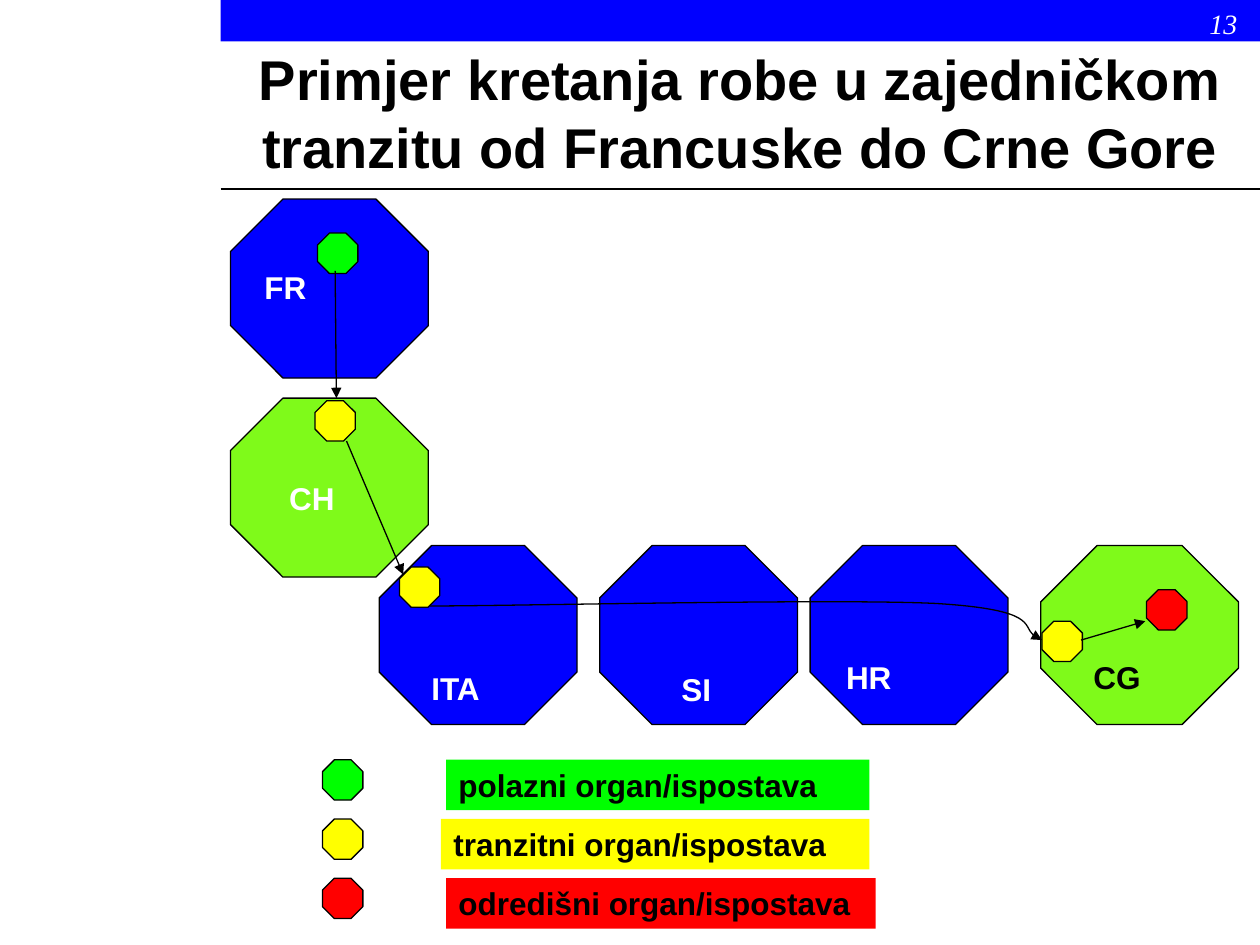
from lxml import etree
from pptx import Presentation
from pptx.dml.color import RGBColor
from pptx.enum.shapes import MSO_CONNECTOR, MSO_SHAPE
from pptx.enum.text import MSO_ANCHOR, MSO_AUTO_SIZE, PP_ALIGN
from pptx.oxml.ns import qn
from pptx.util import Inches, Pt

OCTAGON, RECTANGLE = MSO_SHAPE.OCTAGON, MSO_SHAPE.RECTANGLE
STRAIGHT = MSO_CONNECTOR.STRAIGHT
TOP, MIDDLE = MSO_ANCHOR.TOP, MSO_ANCHOR.MIDDLE
LEFT, CENTER = PP_ALIGN.LEFT, PP_ALIGN.CENTER
NO_AUTOFIT = MSO_AUTO_SIZE.NONE

WIDTH, HEIGHT = 10, 7.5
MARGIN = 0.175 * WIDTH
PANEL = WIDTH - MARGIN
COUNTRY_SIZE = (1.57, 1.42)
OFFICE_SIZE = (0.32, 0.32)
LABEL_SIZE = (0.95, 0.4)
ROWS = (1.58, 3.16, 4.33)
LEGEND_TOP, LEGEND_STEP = 6.03, 0.47
BLUE, LIME, BLACK, WHITE = "0000FF", "7FFA1A", "000000", "FFFFFF"
GREEN, YELLOW, RED = "00FF00", "FFFF00", "FF0000"

COUNTRIES = [
    (4.76, 2, BLUE, 0.293),
    (1.83, 0, BLUE, 0.293),
    (3.01, 2, BLUE, 0.293),
    (6.43, 2, BLUE, 0.293),
    (1.83, 1, LIME, 0.293),
    (8.26, 2, LIME, 0.315),
]
LABELS = [
    ("FR", 1.79, 2.08, WHITE),
    ("CH", 2, 3.75, WHITE),
    ("ITA", 3.14, 5.26, WHITE),
    ("SI", 5.05, 5.27, WHITE),
    ("HR", 6.42, 5.17, WHITE),
    ("CG", 8.39, 5.17, BLACK),
]
OFFICES = [
    (2.52, 1.85, GREEN),
    (2.5, 3.18, YELLOW),
    (3.17, 4.5, YELLOW),
    (8.27, 4.93, YELLOW),
    (9.1, 4.68, RED),
]
ARROWS = [
    ((2.66, 2.15), (2.67, 3.16)),
    ((2.75, 3.5), (3.2, 4.56)),
    ((8.58, 5.08), (9.09, 4.93)),
]
ROUTE = [(3.41, 4.81), (4.08, 4.81), (6.62, 4.75), (7.43, 4.79),
         (8.24, 4.84), (8.09, 5.02), (8.27, 5.08)]
LEGEND = [
    ("polazni organ/ispostava", GREEN, 3.54, 3.36),
    ("tranzitni organ/ispostava", YELLOW, 3.5, 3.4),
    ("odredišni organ/ispostava", RED, 3.54, 3.41),
]


def color(value):
    """Turn a hex string into a colour."""
    return RGBColor.from_string(value)


def write(shape, text, size=18, fill=BLACK, font="Arial", bold=True,
          italic=False, align=LEFT, anchor=TOP, wrap=True):
    """Put one formatted paragraph into a shape."""
    frame = shape.text_frame
    frame.auto_size = NO_AUTOFIT
    frame.word_wrap = wrap
    frame.vertical_anchor = anchor
    paragraph = frame.paragraphs[0]
    paragraph.alignment = align
    run = paragraph.add_run()
    run.text = text
    run.font.name, run.font.size = font, Pt(size)
    run.font.bold, run.font.italic = bold, italic
    run.font.color.rgb = color(fill)


def add_text(slide, text, left, top, width, height, **text_format):
    """Add a text box with one formatted paragraph."""
    box = slide.shapes.add_textbox(*map(Inches, (left, top, width, height)))
    write(box, text, **text_format)


def outline(shape):
    """Give a shape or line the thin black stroke."""
    shape.line.color.rgb = color(BLACK)
    shape.line.width = Pt(0.75)


def add_rectangle(slide, left, top, width, height, fill):
    """Add a filled rectangle without an outline."""
    shape = slide.shapes.add_shape(
        RECTANGLE, *map(Inches, (left, top, width, height)))
    shape.shadow.inherit = False
    shape.fill.solid()
    shape.fill.fore_color.rgb = color(fill)
    shape.line.fill.background()
    return shape


def add_octagon(slide, left, top, size, fill, corner=0.293):
    """Add an outlined octagon."""
    shape = slide.shapes.add_shape(
        OCTAGON, *map(Inches, (left, top, *size)))
    shape.adjustments[0] = corner
    shape.shadow.inherit = False
    shape.fill.solid()
    shape.fill.fore_color.rgb = color(fill)
    outline(shape)


def add_arrowhead(shape):
    """Put a triangle at the end of a line."""
    etree.SubElement(shape.line._get_or_add_ln(), qn("a:tailEnd"),
                     type="triangle")


def add_line(slide, start, end, arrow=False):
    """Add a straight line, with an arrowhead if wanted."""
    line = slide.shapes.add_connector(
        STRAIGHT, *map(Inches, (*start, *end)))
    outline(line)
    if arrow:
        add_arrowhead(line)
    etree.SubElement(line._element.spPr, qn("a:effectLst"))


def add_curve(slide, points):
    """Add an arrow of cubic curves through a start and triples of points."""
    start, *others = [(Inches(x), Inches(y)) for x, y in points]
    builder = slide.shapes.build_freeform(*start)
    builder.add_line_segments(others, close=False)
    curve = builder.convert_to_shape()
    curve.shadow.inherit = False
    curve.fill.background()
    outline(curve)
    add_arrowhead(curve)
    segments = list(curve._element.iter(qn("a:lnTo")))
    for first in range(0, len(segments), 3):
        triple = segments[first:first + 3]
        cubic = etree.SubElement(triple[0].getparent(), qn("a:cubicBezTo"))
        for segment in triple:
            cubic.append(segment[0])
            segment.getparent().remove(segment)


def add_header(slide):
    """Add the bar, slide number, title and rule."""
    add_rectangle(slide, MARGIN, 0, PANEL, 0.33, BLUE)
    add_text(slide, "13", 9.5, 0, 0.5, 0.37, size=16, fill=WHITE,
             font="Times New Roman", bold=False, italic=True)
    title = slide.shapes.title
    title.left, title.top = Inches(MARGIN), Inches(0.3)
    title.width, title.height = Inches(PANEL), Inches(1.18)
    write(title, "Primjer kretanja robe u zajedničkom tranzitu "
          "od Francuske do Crne Gore", size=32, align=CENTER, anchor=MIDDLE)
    rule = 0.2 * HEIGHT
    add_line(slide, (MARGIN, rule), (WIDTH, rule))


def add_map(slide):
    """Add the countries, offices and transit route."""
    for left, row, fill, corner in COUNTRIES:
        add_octagon(slide, left, ROWS[row], COUNTRY_SIZE, fill, corner)
    add_curve(slide, ROUTE)
    for left, top, fill in OFFICES:
        add_octagon(slide, left, top, OFFICE_SIZE, fill)
    for start, end in ARROWS:
        add_line(slide, start, end, arrow=True)
    for text, left, top, fill in LABELS:
        add_text(slide, text, left, top, *LABEL_SIZE, fill=fill, align=CENTER)


def add_legend(slide):
    """Add one marker and coloured caption for each kind of office."""
    for row, (text, fill, left, width) in enumerate(LEGEND):
        top = LEGEND_TOP + row * LEGEND_STEP
        add_octagon(slide, 2.56, top, OFFICE_SIZE, fill)
        caption = add_rectangle(slide, left, top, width, 0.4, fill)
        write(caption, text, wrap=False)


def main():
    """Build and save the presentation."""
    presentation = Presentation()
    presentation.slide_width = Inches(WIDTH)
    presentation.slide_height = Inches(HEIGHT)
    slide = presentation.slides.add_slide(presentation.slide_layouts[5])
    add_header(slide)
    add_map(slide)
    add_legend(slide)
    presentation.save("out.pptx")


if __name__ == "__main__":
    main()
